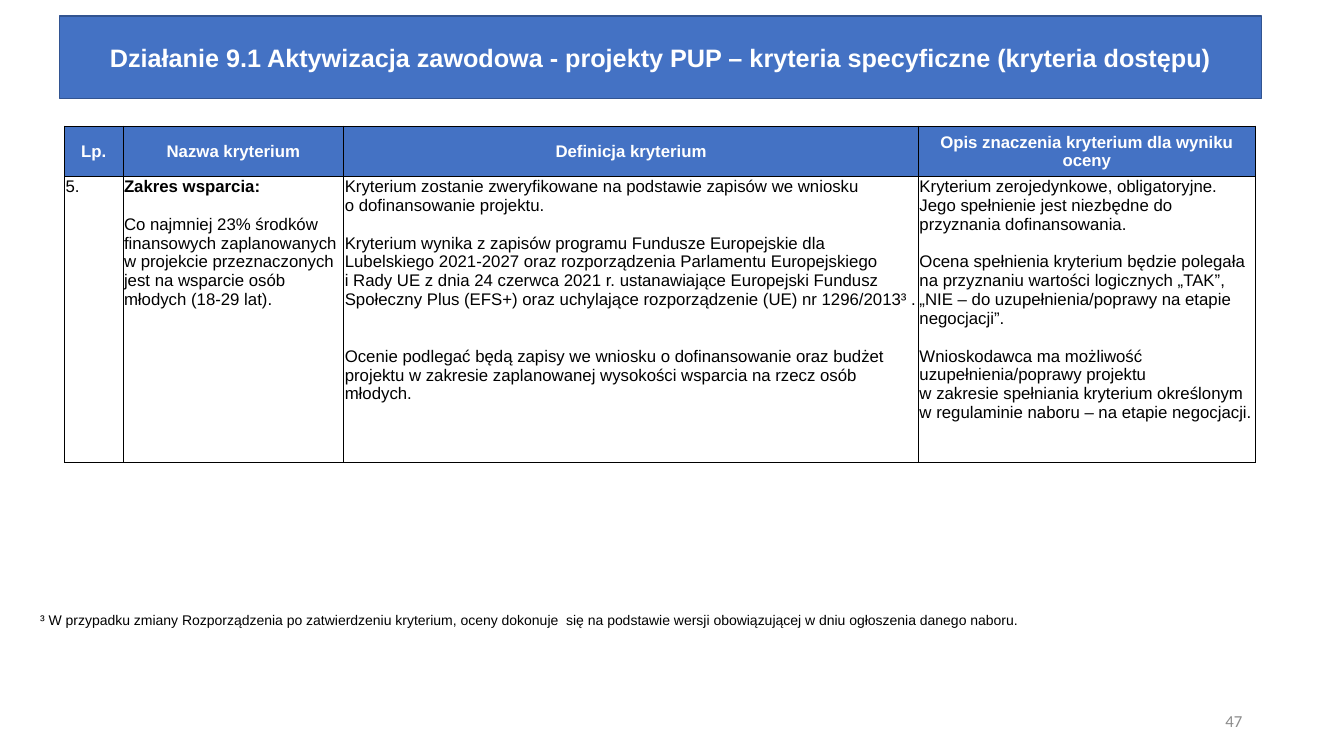
from copy import deepcopy

from lxml.etree import SubElement
from pptx import Presentation
from pptx.dml.color import RGBColor
from pptx.enum.text import MSO_ANCHOR, MSO_AUTO_SIZE, PP_ALIGN
from pptx.oxml.ns import qn
from pptx.util import Inches, Pt

COLORS = {"blue": "4472C4", "outline": "325491", "white": "FFFFFF",
          "black": "000000", "gray": "8C8C8C"}
TITLE = ("Działanie 9.1 Aktywizacja zawodowa - projekty PUP – "
         "kryteria specyficzne (kryteria dostępu)")
HEADERS = ["Lp.", "Nazwa kryterium", "Definicja kryterium",
           "Opis znaczenia kryterium dla wyniku oceny"]
# Each cell is a list of paragraphs: (text, empty lines above, bold)
CRITERION = [
    [("5.", 0, False)],
    [("Zakres wsparcia:", 0, True),
     ("Co najmniej 23% środków finansowych zaplanowanych\n"
      "w projekcie przeznaczonych jest na wsparcie osób młodych (18-29 lat).", 1, False)],
    [("Kryterium zostanie zweryfikowane na podstawie zapisów we wniosku\n"
      "o dofinansowanie projektu.", 0, False),
     ("Kryterium wynika z zapisów programu Fundusze Europejskie dla Lubelskiego "
      "2021-2027 oraz rozporządzenia Parlamentu Europejskiego\n"
      "i Rady UE z dnia 24 czerwca 2021 r. ustanawiające Europejski Fundusz Społeczny "
      "Plus (EFS+) oraz uchylające rozporządzenie (UE) nr 1296/2013³ .", 1, False),
     ("Ocenie podlegać będą zapisy we wniosku o dofinansowanie oraz budżet projektu "
      "w zakresie zaplanowanej wysokości wsparcia na rzecz osób młodych.", 2, False)],
    [("Kryterium zerojedynkowe, obligatoryjne. Jego spełnienie jest niezbędne "
      "do przyznania dofinansowania.", 0, False),
     ("Ocena spełnienia kryterium będzie polegała na przyznaniu wartości "
      "logicznych „TAK”,\n„NIE – do uzupełnienia/poprawy na etapie negocjacji”.", 1, False),
     ("Wnioskodawca ma możliwość uzupełnienia/poprawy projektu\n"
      "w zakresie spełniania kryterium określonym w regulaminie naboru – "
      "na etapie negocjacji.", 1, False)],
]
FOOTNOTE = ("³ W przypadku zmiany Rozporządzenia po zatwierdzeniu kryterium, oceny "
            "dokonuje  się na podstawie wersji obowiązującej w dniu ogłoszenia danego naboru.")
PAGE_NUMBER = "47"

COLUMN_WIDTHS = [0.58, 2.19, 5.7, 3.34]
ROW_HEIGHTS = [0.5, 2.84]
TABLE_LEFT, TABLE_TOP = 0.64, 1.25
LINE_HEIGHT = 13.5


def rgb(name):
    return RGBColor.from_string(COLORS[name])


def write(para, text, size=12, color="black", bold=False, font="Arial",
          align=PP_ALIGN.LEFT, before=0):
    """Fill a paragraph; a newline in the text becomes a line break."""
    para.alignment = align
    if before:
        para.space_before = Pt(before)
    for index, line in enumerate(text.split("\n")):
        if index:
            para.add_line_break()
            para._p[-1].append(deepcopy(span._r.rPr))
        span = para.add_run()
        span.text = line
        span.font.name, span.font.size, span.font.bold = font, Pt(size), bold
        span.font.color.rgb = rgb(color)


def add_text(page, area, text, anchor=MSO_ANCHOR.TOP, **style):
    box = page.shapes.add_textbox(*map(Inches, area))
    box.text_frame.word_wrap = True
    box.text_frame.vertical_anchor = anchor
    write(box.text_frame.paragraphs[0], text, **style)


def add_borders(cell):
    properties = cell._tc.get_or_add_tcPr()
    for index, side in enumerate(("lnL", "lnR", "lnT", "lnB")):
        line = properties.makeelement(qn(f"a:{side}"), {"w": str(Pt(0.5))})
        fill = SubElement(line, qn("a:solidFill"))
        SubElement(fill, qn("a:srgbClr"), val=COLORS["black"])
        properties.insert(index, line)


def add_title(page):
    title = page.shapes.title
    title.left, title.top, title.width, title.height = map(Inches, (0.59, 0.16, 11.92, 0.82))
    title.fill.solid()
    title.fill.fore_color.rgb = rgb("blue")
    title.line.color.rgb = rgb("outline")
    title.line.width = Pt(1)
    frame = title.text_frame
    frame.word_wrap = True
    frame.auto_size = MSO_AUTO_SIZE.NONE
    frame.vertical_anchor = MSO_ANCHOR.MIDDLE
    write(frame.paragraphs[0], TITLE, size=18, color="white", bold=True, align=PP_ALIGN.CENTER)


def format_cell(cell, is_header):
    cell.margin_left = cell.margin_right = cell.margin_top = Inches(0.01)
    cell.margin_bottom = 0
    if is_header:
        cell.fill.solid()
        cell.fill.fore_color.rgb = rgb("blue")
        cell.vertical_anchor = MSO_ANCHOR.MIDDLE
    else:
        cell.fill.background()
        cell.vertical_anchor = MSO_ANCHOR.TOP
    add_borders(cell)


def add_criteria_table(page):
    table = page.shapes.add_table(
        len(ROW_HEIGHTS), len(COLUMN_WIDTHS), Inches(TABLE_LEFT), Inches(TABLE_TOP),
        Inches(sum(COLUMN_WIDTHS)), Inches(sum(ROW_HEIGHTS))).table
    table.horz_banding = False
    for row, height in zip(table.rows, ROW_HEIGHTS):
        row.height = Inches(height)
    for index, width in enumerate(COLUMN_WIDTHS):
        table.columns[index].width = Inches(width)
        header, body = table.cell(0, index), table.cell(1, index)
        format_cell(header, True)
        format_cell(body, False)
        write(header.text_frame.paragraphs[0], HEADERS[index], color="white",
              bold=True, align=PP_ALIGN.CENTER)
        for number, (text, gap, bold) in enumerate(CRITERION[index]):
            frame = body.text_frame
            para = frame.add_paragraph() if number else frame.paragraphs[0]
            write(para, text, bold=bold, before=gap * LINE_HEIGHT)


def main():
    deck = Presentation()
    deck.slide_width, deck.slide_height = Inches(13.33), Inches(7.5)
    page = deck.slides.add_slide(deck.slide_layouts[5])
    add_title(page)
    add_criteria_table(page)
    add_text(page, (0.3, 6.02, 9.97, 0.27), FOOTNOTE, size=10)
    add_text(page, (9.42, 6.95, 3, 0.4), PAGE_NUMBER, anchor=MSO_ANCHOR.MIDDLE,
             color="gray", font="Calibri", align=PP_ALIGN.RIGHT)
    deck.save("out.pptx")


if __name__ == "__main__":
    main()
